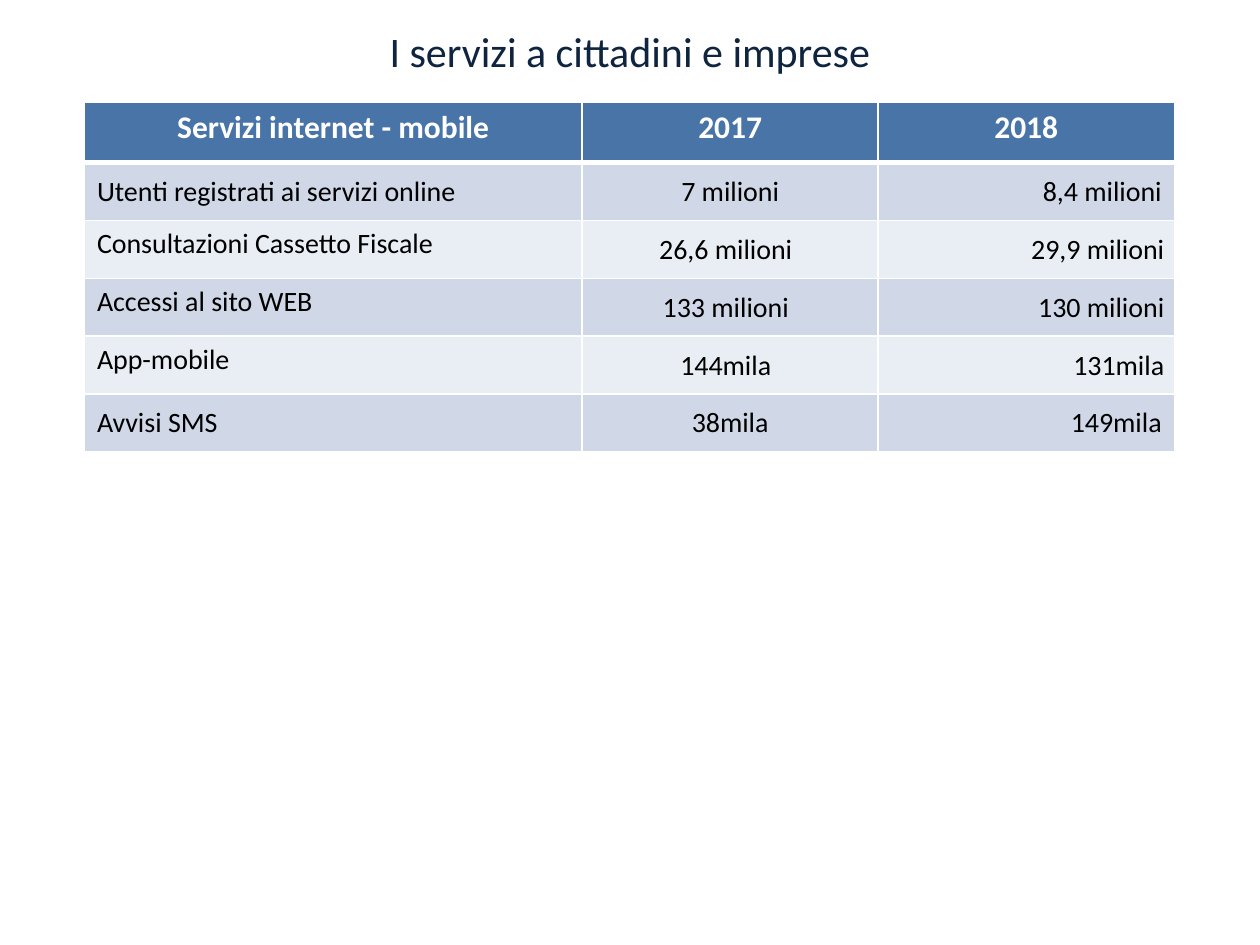
from dataclasses import dataclass

from lxml.etree import SubElement
from pptx import Presentation
from pptx.dml.color import RGBColor
from pptx.enum.text import MSO_ANCHOR, PP_ALIGN
from pptx.oxml.ns import qn
from pptx.util import Inches, Pt

WHITE = RGBColor(0xFF, 0xFF, 0xFF)
BLACK = RGBColor(0x00, 0x00, 0x00)
NAVY = RGBColor(0x0F, 0x24, 0x3E)
HEADER = RGBColor(0x48, 0x74, 0xA8)
BANDS = (RGBColor(0xD0, 0xD8, 0xE8), RGBColor(0xE9, 0xED, 0xF4))
FONT = "Calibri"
WIDTH, HEIGHT = Inches(10), Inches(7.5)
COL_SHARES = (0.395, 0.235, 0.235)
ROW_SHARES = (0.064,) + (0.0613,) * 5
ALIGNS = (PP_ALIGN.LEFT, PP_ALIGN.CENTER, PP_ALIGN.RIGHT)


@dataclass(frozen=True)
class Service:
    name: str
    y2017: str
    y2018: str
    tight: bool = False

    @property
    def texts(self) -> tuple:
        return self.name, self.y2017, self.y2018


HEADINGS = Service("Servizi internet - mobile", "2017", "2018")
SERVICES = (
    Service("Utenti registrati ai servizi online", "7 milioni", "8,4 milioni"),
    Service("Consultazioni Cassetto Fiscale", "26,6 milioni", "29,9 milioni", True),
    Service("Accessi al sito WEB", "133 milioni", "130 milioni", True),
    Service("App-mobile", "144mila", "131mila", True),
    Service("Avvisi SMS", "38mila", "149mila"),
)


def write(tf, text: str, size: int, color: RGBColor, align, bold: bool = False) -> None:
    """Set one formatted paragraph in a text frame."""
    tf.text = text
    p = tf.paragraphs[0]
    p.alignment = align
    font = p.runs[0].font
    font.name, font.size, font.bold = FONT, Pt(size), bold
    font.color.rgb = color


def add_borders(cell, top: int, bottom: int) -> None:
    """Draw white borders on the four sides of a cell."""
    tc_pr = cell._tc.get_or_add_tcPr()
    for side, width in (("L", 1), ("R", 1), ("T", top), ("B", bottom)):
        ln = SubElement(tc_pr, qn(f"a:ln{side}"), w=str(Pt(width)))
        fill = SubElement(ln, qn("a:solidFill"))
        SubElement(fill, qn("a:srgbClr"), val=str(WHITE))


def fill_row(table, row: int, service: Service) -> None:
    """Write and format one row, the header being row zero."""
    header = row == 0
    for col, text in enumerate(service.texts):
        cell = table.cell(row, col)
        add_borders(cell, 3 if row == 1 else 1, 3 if header else 1)
        cell.fill.solid()
        cell.fill.fore_color.rgb = HEADER if header else BANDS[(row - 1) % 2]
        if header:
            write(cell.text_frame, text, 18, WHITE, PP_ALIGN.CENTER, True)
        else:
            write(cell.text_frame, text, 16, BLACK, ALIGNS[col])
        middle = not header and (col > 0 or not service.tight)
        cell.vertical_anchor = MSO_ANCHOR.MIDDLE if middle else MSO_ANCHOR.TOP
        if service.tight and col > 0:
            cell.margin_left = cell.margin_top = Inches(0.01)
            cell.margin_right, cell.margin_bottom = Inches(0.08), 0


def add_services_table(s) -> None:
    """Add the table of services by year."""
    widths = [int(WIDTH * share) for share in COL_SHARES]
    heights = [int(HEIGHT * share) for share in ROW_SHARES]
    table = s.shapes.add_table(len(heights), len(widths), Inches(0.67), Inches(0.81),
                               sum(widths), sum(heights)).table
    for column, width in zip(table.columns, widths):
        column.width = width
    for row, height in zip(table.rows, heights):
        row.height = height
    for row, service in enumerate((HEADINGS, *SERVICES)):
        fill_row(table, row, service)


def add_title(s) -> None:
    """Add the centred slide title."""
    width = int(WIDTH * 0.764)
    sp = s.shapes.add_textbox((WIDTH - width) // 2, Inches(0.15), width, Inches(0.5))
    sp.text_frame.word_wrap = True
    write(sp.text_frame, "I servizi a cittadini e imprese", 24, NAVY, PP_ALIGN.CENTER)


def main() -> None:
    """Build and save the slide."""
    prs = Presentation()
    prs.slide_width, prs.slide_height = WIDTH, HEIGHT
    s = prs.slides.add_slide(prs.slide_layouts[6])
    add_services_table(s)
    add_title(s)
    prs.save("out.pptx")


if __name__ == "__main__":
    main()
